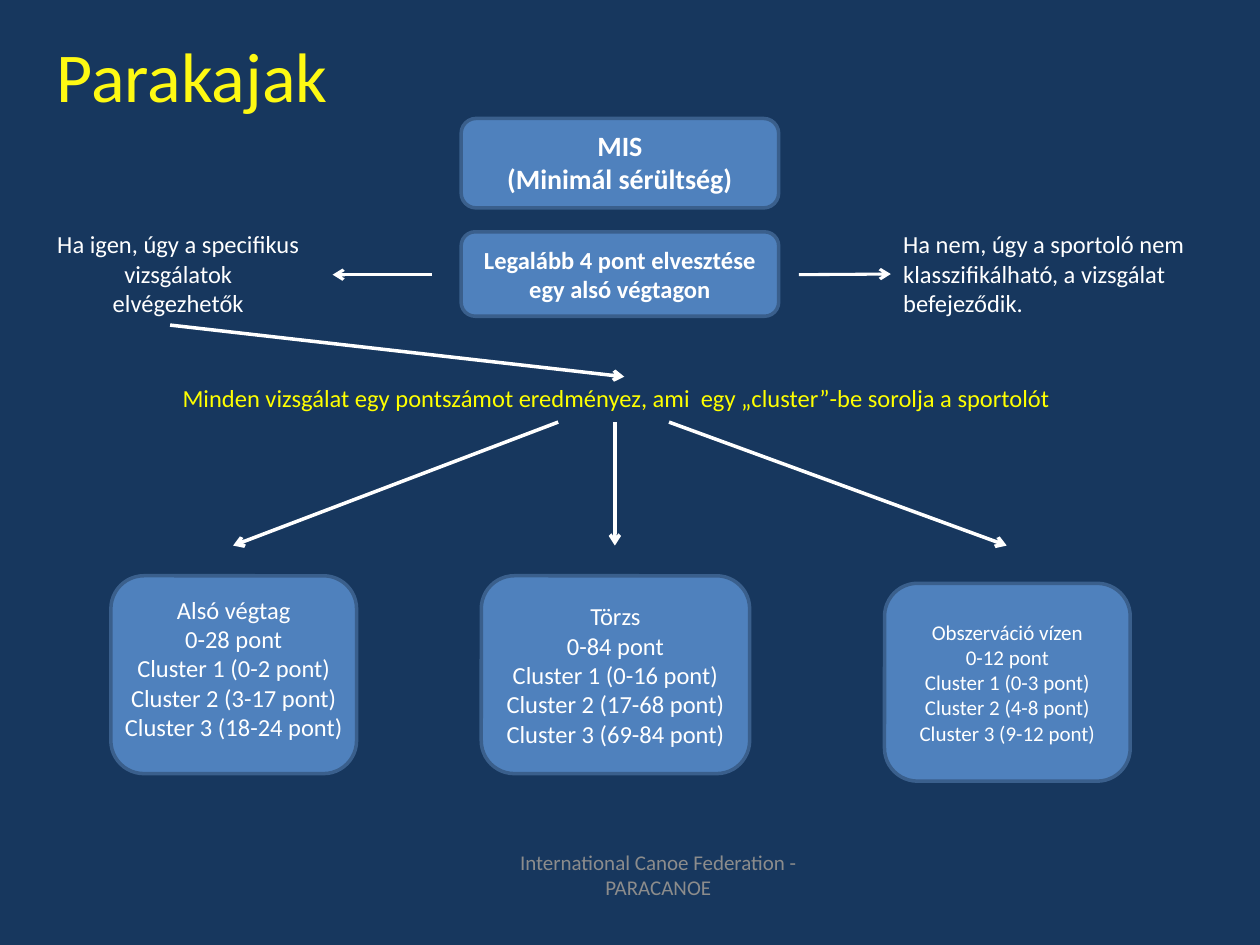
"""Build the Parakajak classification flow slide."""
from lxml import etree
from pptx import Presentation
from pptx.dml.color import RGBColor
from pptx.enum import shapes, text
from pptx.oxml import ns
from pptx.util import Inches, Pt

NAVY = RGBColor(0x17, 0x37, 0x5E)
BLUE = RGBColor(0x4F, 0x81, 0xBD)
EDGE = RGBColor(0x3A, 0x5F, 0x8C)
WHITE = RGBColor(0xFF, 0xFF, 0xFF)
GRAY = RGBColor(0x8C, 0x8C, 0x8C)
LEMON = RGBColor(0xFE, 0xF9, 0x13)
YELLOW = RGBColor(0xFF, 0xFF, 0x00)
LEFT, MID = text.PP_ALIGN.LEFT, text.PP_ALIGN.CENTER
TOP, CORE = text.MSO_ANCHOR.TOP, text.MSO_ANCHOR.MIDDLE


def write(shape, words, size=14, color=WHITE, bold=False, align=MID, anchor=TOP, wrap=True):
    frame = shape.text_frame
    frame.text = words
    frame.auto_size = text.MSO_AUTO_SIZE.NONE
    frame.word_wrap = wrap
    frame.vertical_anchor = anchor
    for para in frame.paragraphs:
        para.alignment = align
        font = para.runs[0].font
        font.name, font.size, font.bold = "Calibri", Pt(size), bold
        font.color.rgb = color


deck = Presentation()
deck.slide_width, deck.slide_height = Inches(10), Inches(7.5)
slide = deck.slides.add_slide(deck.slide_layouts[5])
slide.background.fill.solid()
slide.background.fill.fore_color.rgb = NAVY

title = slide.shapes.title
title.left, title.top = Inches(0.35), Inches(0.21)
title.width, title.height = Inches(3.78), Inches(0.77)
write(title, "Parakajak", size=40, color=LEMON, align=LEFT)

trunk = "Törzs\n0-84 pont\nCluster 1 (0-16 pont)\nCluster 2 (17-68 pont)\nCluster 3 (69-84 pont)"
water = "Obszerváció vízen\n0-12 pont\nCluster 1 (0-3 pont)\nCluster 2 (4-8 pont)\nCluster 3 (9-12 pont)"
boxes = [
    ((3.66, 0.94, 2.52, 0.71), "", {}),
    ((3.66, 1.84, 2.52, 0.67), "Legalább 4 pont elvesztése egy alsó végtagon", {"bold": True}),
    ((0.88, 4.57, 1.95, 1.57), "", {}),
    ((3.82, 4.57, 2.13, 1.57), trunk, {}),
    ((7.02, 4.63, 1.95, 1.57), water, {"size": 12}),
]
for place, words, style in boxes:
    box = slide.shapes.add_shape(
        shapes.MSO_SHAPE.FLOWCHART_ALTERNATE_PROCESS, *map(Inches, place))
    box.shadow.inherit = False
    box.fill.solid()
    box.fill.fore_color.rgb = BLUE
    box.line.color.rgb = EDGE
    box.line.width = Pt(2)
    if words:
        write(box, words, anchor=CORE, **style)

legs = "Alsó végtag\n0-28 pont\nCluster 1 (0-2 pont)\nCluster 2 (3-17 pont)\nCluster 3 (18-24 pont)"
stop = "Ha nem, úgy a sportoló nem\nklasszifikálható, a vizsgálat\nbefejeződik."
score = "Minden vizsgálat egy pontszámot eredményez, ami  egy „cluster”-be sorolja a sportolót"
notes = [
    ((3.82, 0.97, 2.2, 0.64), "MIS\n(Minimál sérültség)", {"size": 16, "bold": True}),
    ((0.35, 1.77, 2.13, 0.81), "Ha igen, úgy a specifikus vizsgálatok elvégezhetők", {}),
    ((7.07, 1.77, 2.5, 0.81), stop, {"align": LEFT, "wrap": False}),
    ((1.35, 2.99, 7.21, 0.34), score, {"color": YELLOW, "align": LEFT, "wrap": False}),
    ((0.88, 4.67, 1.95, 1.28), legs, {"wrap": False}),
    ((3.64, 6.74, 3.17, 0.4), "International Canoe Federation - PARACANOE",
     {"size": 12, "color": GRAY, "anchor": CORE}),
]
labels = {}
for place, words, style in notes:
    label = slide.shapes.add_textbox(*map(Inches, place))
    write(label, words, **style)
    labels[words] = label

arrows = [
    ((6.34, 2.18, 7.05, 2.18), 1.75, (labels[stop], 1)),
    ((3.43, 2.18, 2.64, 2.18), 1.75, None),
    ((1.35, 2.58, 4.96, 2.99), 2, (labels[score], 0)),
    ((4.43, 3.35, 1.85, 4.33), 2, None),
    ((4.88, 3.35, 4.88, 4.33), 2, None),
    ((5.31, 3.35, 7.99, 4.33), 2, None),
]
for ends, width, goal in arrows:
    arrow = slide.shapes.add_connector(shapes.MSO_CONNECTOR.STRAIGHT, *map(Inches, ends))
    if goal:
        arrow.end_connect(*goal)
    arrow.line.color.rgb = WHITE
    arrow.line.width = Pt(width)
    etree.SubElement(arrow.line._get_or_add_ln(), ns.qn("a:tailEnd"), type="arrow")
    etree.SubElement(arrow._element.spPr, ns.qn("a:effectLst"))

deck.save("out.pptx")
